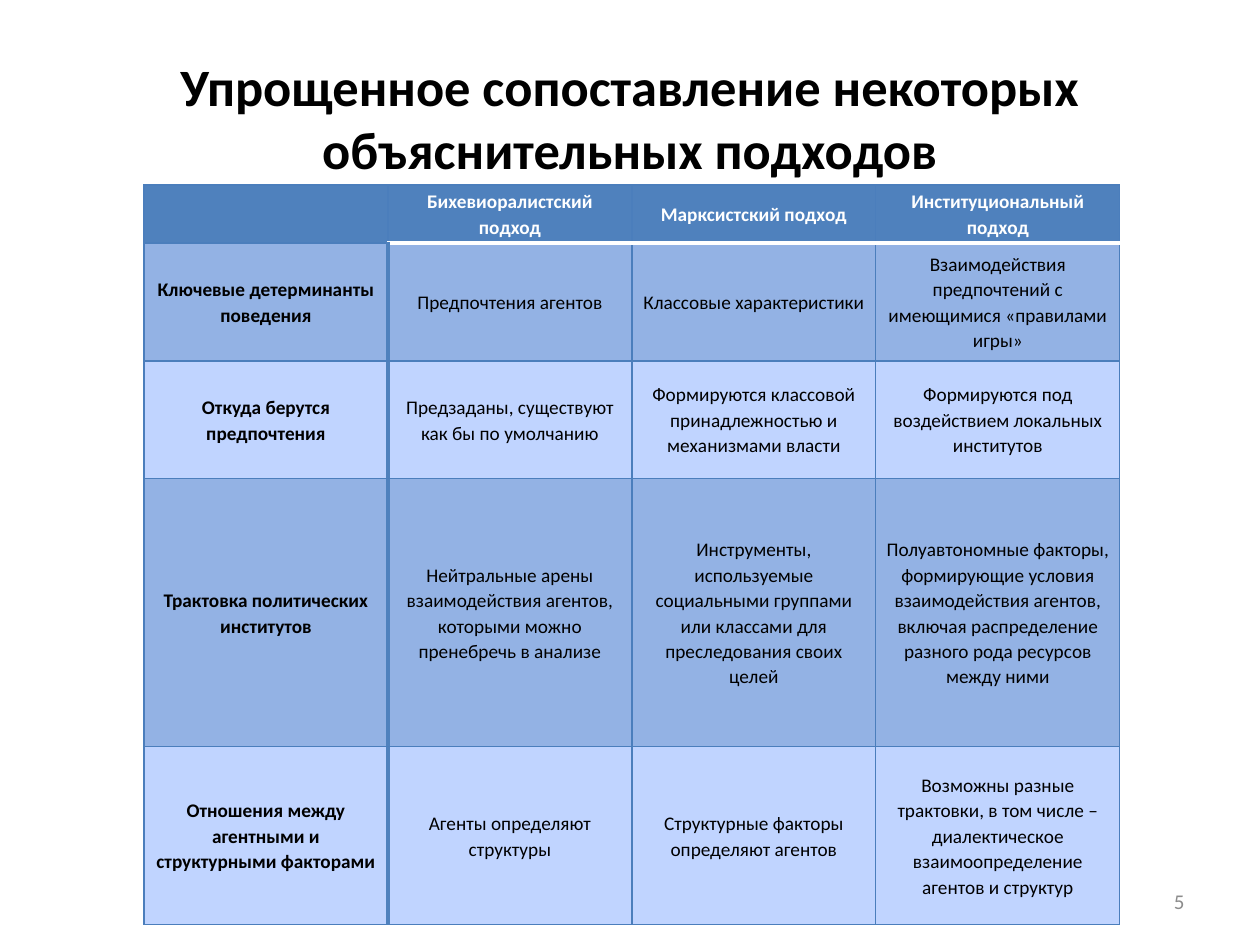
from dataclasses import dataclass

from lxml.etree import SubElement
from pptx import Presentation
from pptx.dml.color import RGBColor
from pptx.enum.text import MSO_ANCHOR as Anchor, PP_ALIGN as Align
from pptx.oxml.ns import qn
from pptx.util import Emu, Pt

PX_PER_INCH = 126


def px(length):
    return Emu(round(length * 914400 / PX_PER_INCH))


@dataclass(frozen=True)
class Theme:
    font: str = "Calibri"
    text: str = "000000"
    light: str = "FFFFFF"
    muted: str = "8C8C8C"
    accent: str = "4F81BD"
    grid: str = "4B7EBC"
    bands: tuple = ("93B2E4", "C0D4FF")
    title_size: int = 30
    table_size: int = 11
    number_size: int = 12
    thin: float = 0.75
    thick: float = 2


class SlideBuilder:
    def __init__(self, slide, theme):
        self.slide = slide
        self.theme = theme

    def set_text(self, frame, text, size, color, align, bold=False):
        frame.word_wrap = True
        frame.text = text
        paragraph = frame.paragraphs[0]
        paragraph.alignment = align
        font = paragraph.font
        font.name, font.size, font.bold = self.theme.font, Pt(size), bold
        font.color.rgb = RGBColor.from_string(color)
        return paragraph

    def title(self, text, left, top, width, height):
        shape = self.slide.shapes.title
        shape.left, shape.top = px(left), px(top)
        shape.width, shape.height = px(width), px(height)
        shape.text_frame.vertical_anchor = Anchor.MIDDLE
        self.set_text(shape.text_frame, text, self.theme.title_size,
                      self.theme.text, Align.CENTER, bold=True)

    def slide_number(self, text, left, top, width, height):
        box = self.slide.shapes.add_textbox(px(left), px(top), px(width), px(height))
        box.text_frame.vertical_anchor = Anchor.MIDDLE
        self.set_text(box.text_frame, text, self.theme.number_size,
                      self.theme.muted, Align.RIGHT)

    def borders(self, cell, sides):
        properties = cell._tc.get_or_add_tcPr()
        for index, side in enumerate("LRTB"):
            color, width = sides[side]
            line = SubElement(properties, qn(f"a:ln{side}"), w=str(int(Pt(width))))
            fill = SubElement(line, qn("a:solidFill"))
            SubElement(fill, qn("a:srgbClr"), val=color)
            properties.insert(index, line)

    def cell(self, cell, text, row, column):
        theme = self.theme
        header, label = row == 0, column == 0
        cell.vertical_anchor = Anchor.MIDDLE
        cell.margin_left = cell.margin_right = px(9)
        cell.margin_top = cell.margin_bottom = 0
        paragraph = self.set_text(cell.text_frame, text, theme.table_size,
                                  theme.light if header else theme.text,
                                  Align.CENTER, bold=header or label)
        paragraph.line_spacing = 1.07
        cell.fill.solid()
        color = theme.accent if header else theme.bands[(row - 1) % 2]
        cell.fill.fore_color.rgb = RGBColor.from_string(color)

        # White rule under the headings, thick rule beside the row labels
        sides = dict.fromkeys("LRTB", (theme.grid, theme.thin))
        if not label and row < 2:
            sides["B" if header else "T"] = (theme.light, theme.thick)
        if not header and column < 2:
            sides["R" if label else "L"] = (theme.accent, theme.thick)
        self.borders(cell, sides)

    def table(self, rows, left, top, column_width, row_heights):
        columns = len(rows[0])
        table = self.slide.shapes.add_table(
            len(rows), columns, px(left), px(top),
            px(column_width * columns), px(sum(row_heights))).table
        table.horz_banding = False
        for column in table.columns:
            column.width = px(column_width)
        for row, (texts, height) in enumerate(zip(rows, row_heights)):
            table.rows[row].height = px(height)
            for column, text in enumerate(texts):
                self.cell(table.cell(row, column), text, row, column)


APPROACHES = [
    ("", "Бихевиоралистский подход", "Марксистский подход",
     "Институциональный подход"),
    ("Ключевые детерминанты поведения", "Предпочтения агентов",
     "Классовые характеристики",
     "Взаимодействия предпочтений с имеющимися «правилами игры»"),
    ("Откуда берутся предпочтения",
     "Предзаданы, существуют как бы по умолчанию",
     "Формируются классовой принадлежностью и механизмами власти",
     "Формируются под воздействием локальных институтов"),
    ("Трактовка политических институтов",
     "Нейтральные арены взаимодействия агентов, которыми можно пренебречь в анализе",
     "Инструменты, используемые социальными группами или классами "
     "для преследования своих целей",
     "Полуавтономные факторы, формирующие условия взаимодействия агентов, "
     "включая распределение разного рода ресурсов между ними"),
    ("Отношения между агентными и структурными факторами",
     "Агенты определяют структуры", "Структурные факторы определяют агентов",
     "Возможны разные трактовки, в том числе – диалектическое "
     "взаимоопределение агентов и структур"),
]


def main():
    presentation = Presentation()
    presentation.slide_width, presentation.slide_height = px(1260), px(945)
    title_only = presentation.slide_layouts[5]
    builder = SlideBuilder(presentation.slides.add_slide(title_only), Theme())

    # Heading
    builder.title("Упрощенное сопоставление некоторых объяснительных подходов",
                  63, 38, 1134, 158)

    # Comparison of approaches
    builder.table(APPROACHES, 144, 185, 244, [58, 118, 118, 268, 178])

    # Page number
    builder.slide_number("5", 903, 876, 294, 50)

    presentation.save("out.pptx")


if __name__ == "__main__":
    main()
